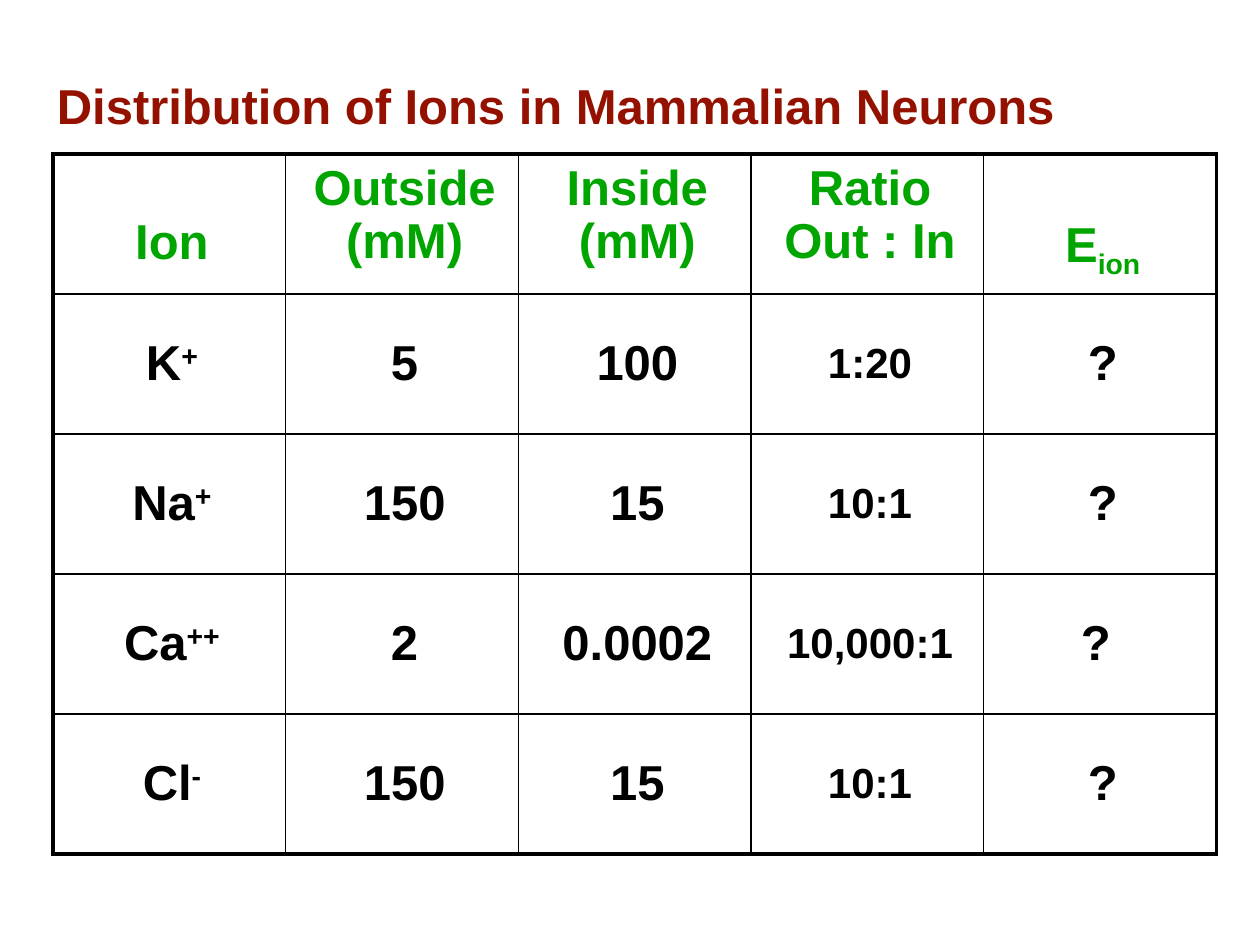
from lxml import etree
from pptx import Presentation
from pptx.dml.color import RGBColor
from pptx.enum import text
from pptx.oxml import ns
from pptx.util import Pt

FONT = "Arial"
RED, GREEN, BLACK = "941100", "00A500", "000000"
INSET, INDENT = 4.3, 3
LINE_PITCH = 31  # height of one header line
COLUMN, ROW = 133, 80
THIN, THICK = 1, 2.25

# Each line is a list of (text, baseline shift in percent) runs
HEADERS = [
    [[("Ion", 0)]],
    [[("Outside", 0)], [("(mM)", 0)]],
    [[("Inside", 0)], [("(mM)", 0)]],
    [[("Ratio", 0)], [("Out : In", 0)]],
    [[("E", 0), ("ion", -25)]],
]
# Ion, charge, outside, inside, ratio
IONS = [
    ("K", "+", "5", "100", "1:20"),
    ("Na", "+", "150", "15", "10:1"),
    ("Ca", "++", "2", "0.0002", "10,000:1"),
    ("Cl", "-", "150", "15", "10:1"),
]


def rgb(color):
    return RGBColor.from_string(color)


def set_insets(box, top=INSET, right=INSET):
    box.margin_left = box.margin_bottom = Pt(INSET)
    box.margin_top, box.margin_right = Pt(top), Pt(right)


def write_line(paragraph, runs, color, size=28, align=text.PP_ALIGN.CENTER):
    paragraph.alignment = align
    properties = paragraph._p.get_or_add_pPr()
    properties.set("marL", str(Pt(INDENT)))
    properties.set("indent", "0")
    for words, shift in runs:
        run = paragraph.add_run()
        run.text = words
        run.font.name, run.font.size, run.font.bold = FONT, Pt(size), True
        run.font.color.rgb = rgb(color)
        if shift:
            run._r.get_or_add_rPr().set("baseline", str(shift * 1000))


def set_borders(cell, widths):
    """Draw the borders; widths are in the order left, right, top, bottom."""
    properties = cell._tc.get_or_add_tcPr()
    for index, (side, width) in enumerate(zip("LRTB", widths)):
        line = etree.Element(ns.qn("a:ln" + side), w=str(Pt(width)))
        fill = etree.SubElement(line, ns.qn("a:solidFill"))
        etree.SubElement(fill, ns.qn("a:srgbClr"), val=BLACK)
        properties.insert(index, line)


def fill_header(cell, lines):
    # Single-line headers sit level with the second line of the others
    missing = 2 - len(lines)
    set_insets(cell, top=INSET + 1.3 + missing * LINE_PITCH)
    cell.vertical_anchor = text.MSO_ANCHOR.TOP
    frame = cell.text_frame
    for number, runs in enumerate(lines):
        paragraph = frame.add_paragraph() if number else frame.paragraphs[0]
        paragraph.line_spacing = 0.96
        write_line(paragraph, runs, GREEN)


def fill_value(cell, runs, size=28, right=INSET):
    set_insets(cell, right=right)
    cell.vertical_anchor = text.MSO_ANCHOR.MIDDLE
    paragraph = cell.text_frame.paragraphs[0]
    paragraph.space_before = Pt(17)
    write_line(paragraph, runs, BLACK, size)


def add_title(slide, words):
    title = slide.shapes.add_textbox(Pt(25.2), Pt(-12.2), Pt(644.4), Pt(144.7))
    frame = title.text_frame
    frame.word_wrap = True
    frame.vertical_anchor = text.MSO_ANCHOR.MIDDLE
    set_insets(frame)
    write_line(frame.paragraphs[0], [(words, 0)], RED, align=text.PP_ALIGN.LEFT)


def add_ion_table(slide):
    rows, columns = len(IONS) + 1, len(HEADERS)
    table = slide.shapes.add_table(rows, columns, Pt(30.25), Pt(88),
                                   Pt(columns * COLUMN), Pt(rows * ROW)).table
    table.first_row = table.horz_banding = False
    for column in table.columns:
        column.width = Pt(COLUMN)
    for row in table.rows:
        row.height = Pt(ROW)

    # Thick frame, thin inner grid
    for r in range(rows):
        for c in range(columns):
            cell = table.cell(r, c)
            cell.fill.background()
            on_edge = (c == 0, c == columns - 1, r == 0, r == rows - 1)
            set_borders(cell, [THICK if edge else THIN for edge in on_edge])

    # Header row
    for c, lines in enumerate(HEADERS):
        fill_header(table.cell(0, c), lines)

    # One row per ion
    for r, (ion, charge, outside, inside, ratio) in enumerate(IONS, 1):
        fill_value(table.cell(r, 0), [(ion, 0), (charge, 30)])
        fill_value(table.cell(r, 1), [(outside, 0)])
        fill_value(table.cell(r, 2), [(inside, 0)])
        fill_value(table.cell(r, 3), [(ratio, 0)], size=24)
        # The calcium question mark stands slightly to the left
        fill_value(table.cell(r, 4), [("?", 0)],
                   right=INSET + (7.8 if ion == "Ca" else 0))


def main():
    deck = Presentation()
    deck.slide_width, deck.slide_height = Pt(720), Pt(540)
    slide = deck.slides.add_slide(deck.slide_layouts[6])
    add_title(slide, "Distribution of Ions in Mammalian Neurons")
    add_ion_table(slide)
    deck.save("out.pptx")


if __name__ == "__main__":
    main()
